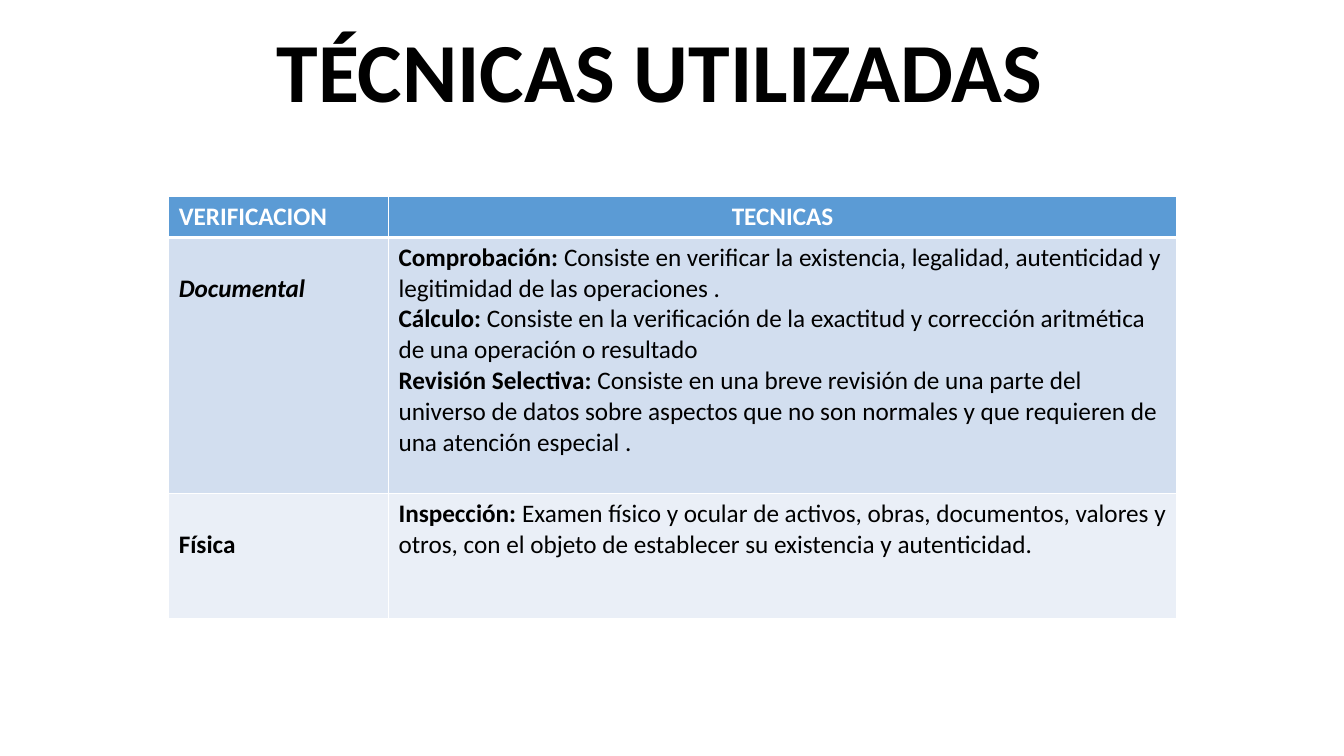
from lxml import etree
from pptx import Presentation
from pptx.dml.color import RGBColor
from pptx.enum import text as t
from pptx.oxml import ns
from pptx.util import Pt

HUES = {"ink": "000000", "white": "FFFFFF", "head": "5B9BD5",
        "band": "D2DEEF", "pale": "EAEFF7"}


def write(para, words, size=18, hue="ink", bold=False, italic=False, align=None):
    run = para.add_run()
    run.text = words
    font = run.font
    font.name, font.size = "Calibri", Pt(size)
    font.bold, font.italic = bold, italic
    font.color.rgb = RGBColor.from_string(HUES[hue])
    if align is not None:
        para.alignment = align


def edge(cell, base):
    """Draw white borders, with the bottom one base points wide."""
    props = cell._tc.get_or_add_tcPr()
    for i, side in enumerate("LRTB"):
        wide = base if side == "B" else 1
        line = etree.Element(ns.qn(f"a:ln{side}"), w=str(Pt(wide)))
        fill = etree.SubElement(line, ns.qn("a:solidFill"))
        etree.SubElement(fill, ns.qn("a:srgbClr"), val=HUES["white"])
        props.insert(i, line)


deck = Presentation()
deck.slide_width, deck.slide_height = Pt(960), Pt(540)
slide = deck.slides.add_slide(deck.slide_layouts[6])

# Title
title = slide.shapes.add_textbox(Pt(162), Pt(11.5), Pt(618.5), Pt(78.5)).text_frame
title.word_wrap = True
title.vertical_anchor = t.MSO_ANCHOR.BOTTOM
head = title.paragraphs[0]
head.line_spacing = 0.9
write(head, "TÉCNICAS UTILIZADAS", size=60, bold=True, align=t.PP_ALIGN.CENTER)

# Table
grid = slide.shapes.add_table(3, 2, Pt(120.5), Pt(140.4), Pt(720), Pt(301.5)).table
for col, width in zip(grid.columns, (157, 563)):
    col.width = Pt(width)
for row, height in zip(grid.rows, (29.2, 183, 89.3)):
    row.height = Pt(height)

for cell, words, align in zip(grid.rows[0].cells, ("VERIFICACION", "TECNICAS"),
                              (t.PP_ALIGN.LEFT, t.PP_ALIGN.CENTER)):
    write(cell.text_frame.paragraphs[0], words, hue="white", bold=True, align=align)

checks = [
    ("Documental", True, [
        ("Comprobación: ", "Consiste en verificar la existencia, legalidad, "
         "autenticidad y legitimidad de las operaciones ."),
        ("Cálculo: ", "Consiste en la verificación de la exactitud y corrección "
         "aritmética de una operación o resultado"),
        ("Revisión Selectiva: ", "Consiste en una breve revisión de una parte del "
         "universo de datos sobre aspectos que no son normales y que requieren de "
         "una atención especial ."),
    ]),
    ("Física", False, [
        ("Inspección: ", "Examen físico y ocular de activos, obras, documentos, "
         "valores y otros, con el objeto de establecer su existencia y autenticidad."),
    ]),
]
for r, (kind, italic, items) in enumerate(checks, 1):
    label, body = grid.cell(r, 0), grid.cell(r, 1)
    label.margin_top = Pt(25.6)
    write(label.text_frame.paragraphs[0], kind, bold=True, italic=italic)
    for i, (term, sense) in enumerate(items):
        frame = body.text_frame
        para = frame.add_paragraph() if i else frame.paragraphs[0]
        write(para, term, bold=True)
        write(para, sense)

for row, hue, base in zip(grid.rows, ("head", "band", "pale"), (3, 1, 1)):
    for cell in row.cells:
        cell.fill.solid()
        cell.fill.fore_color.rgb = RGBColor.from_string(HUES[hue])
        edge(cell, base)

deck.save("out.pptx")
